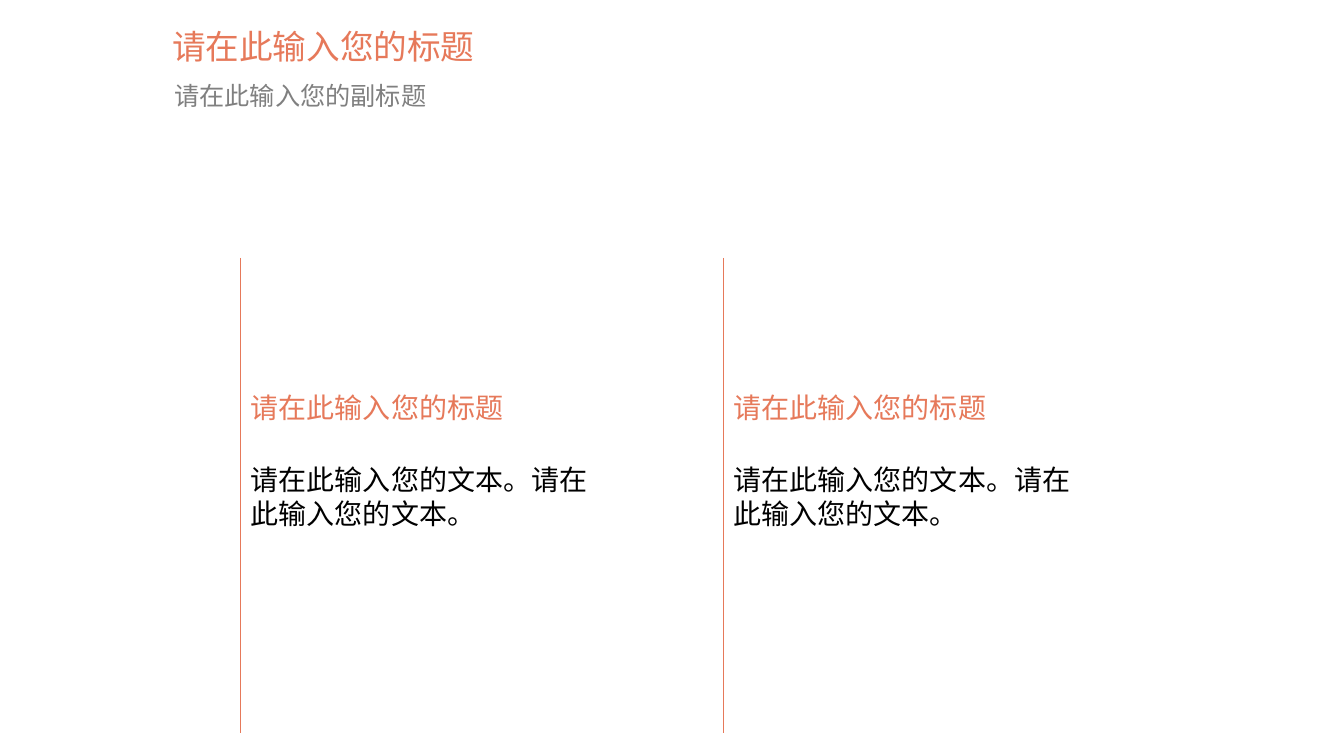
"""Build a slide with a heading, a subheading and two ruled text columns."""
import pptx
import pptx.dml.color
import pptx.enum.shapes
import pptx.enum.text
import pptx.oxml
import pptx.util

Pt = pptx.util.Pt
ANCHOR = pptx.enum.text.MSO_ANCHOR
CORAL = pptx.dml.color.RGBColor(0xE6, 0x79, 0x5A)
GREY = pptx.dml.color.RGBColor(0x80, 0x80, 0x80)
BLACK = pptx.dml.color.RGBColor(0x00, 0x00, 0x00)

TITLE = "请在此输入您的标题"
SUBTITLE = "请在此输入您的副标题"
BODY = "请在此输入您的文本。请在此输入您的文本。"

COLUMN_LEFTS = (172.1, 517)
COLUMN_WIDTH = 270.7
RULE_TOP, RULE_BOTTOM = 184.3, 523.5


def add_text(slide, words, bounds, size, color, anchor):
    """Add a text box and return its paragraph."""
    box = slide.shapes.add_textbox(*[Pt(length) for length in bounds])
    box.text_frame.word_wrap = True
    box.text_frame.vertical_anchor = anchor
    paragraph = box.text_frame.paragraphs[0]
    run = paragraph.add_run()
    run.text = words
    for name, value in {"name": "Arial", "size": Pt(size)}.items():
        setattr(run.font, name, value)
    run.font.color.rgb = color
    return paragraph


deck = pptx.Presentation()
deck.slide_width, deck.slide_height = Pt(960), Pt(540)
slide = deck.slides.add_slide(deck.slide_layouts[6])

for left in COLUMN_LEFTS:
    add_text(slide, TITLE, (left, 255.6, COLUMN_WIDTH, 71.3), 20, CORAL, ANCHOR.MIDDLE)
    add_text(slide, BODY, (left, 326.9, COLUMN_WIDTH, 197.3), 20, BLACK, ANCHOR.TOP)

for left in COLUMN_LEFTS:
    rule = slide.shapes.add_connector(
        pptx.enum.shapes.MSO_CONNECTOR.STRAIGHT,
        Pt(left), Pt(RULE_TOP), Pt(left), Pt(RULE_BOTTOM))
    rule.line.color.rgb = CORAL
    rule.line.width = Pt(0.75)
    rule._element.spPr.append(pptx.oxml.parse_xml(
        '<a:effectLst xmlns:a="http://schemas.openxmlformats.org/drawingml/2006/main"/>'))

add_text(slide, TITLE, (115.9, 10.1, 688.3, 46.1), 24, CORAL, ANCHOR.MIDDLE)
subtitle = add_text(slide, SUBTITLE, (117.4, 56.2, 686.9, 38.9), 18, GREY, ANCHOR.TOP)
subtitle.line_spacing = 0.9

deck.save("out.pptx")
